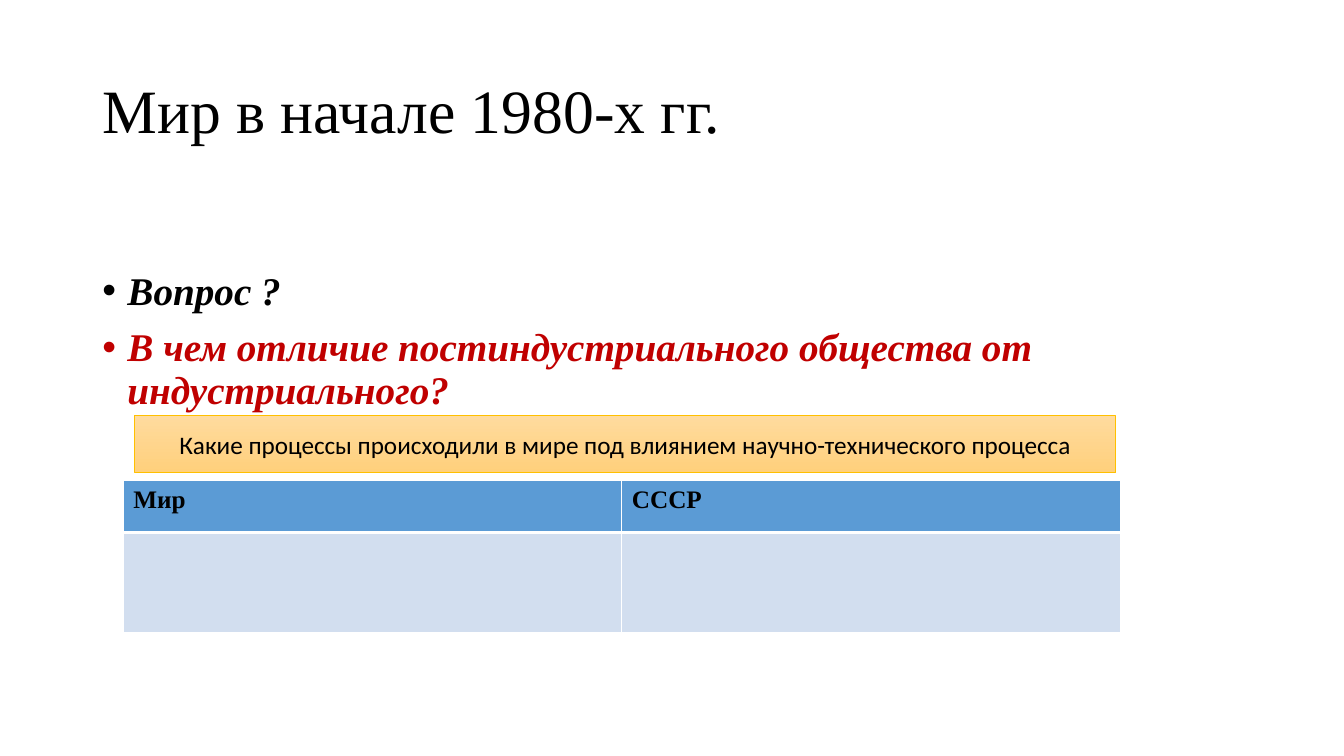
import pptx
import pptx.util
import pptx.dml.color
import pptx.enum.shapes
import pptx.enum.text
import pptx.oxml.ns
import lxml.etree

Pt = pptx.util.Pt
RGB = pptx.dml.color.RGBColor
ALIGN = pptx.enum.text.PP_ALIGN
ANCHOR = pptx.enum.text.MSO_ANCHOR
qn = pptx.oxml.ns.qn

BLACK = RGB(0x00, 0x00, 0x00)
WHITE = RGB(0xFF, 0xFF, 0xFF)
RED = RGB(0xC0, 0x00, 0x00)
BLUE = RGB(0x5B, 0x9B, 0xD5)
PALE_BLUE = RGB(0xD2, 0xDE, 0xEF)
GOLD = RGB(0xFF, 0xC0, 0x00)
LIGHT_ORANGE = RGB(0xFF, 0xDB, 0x9E)
ORANGE = RGB(0xFF, 0xD0, 0x7C)
SERIF = "Times New Roman"


def add_run(p, text, size, color, font=SERIF, bold=False, italic=False):
    r = p.add_run()
    r.text = text
    r.font.name = font
    r.font.size = Pt(size)
    r.font.color.rgb = color
    r.font.bold = bold
    r.font.italic = italic


def add_border(cell, side, width):
    tcPr = cell._tc.get_or_add_tcPr()
    ln = lxml.etree.SubElement(tcPr, qn("a:" + side), w=str(Pt(width)))
    fill = lxml.etree.SubElement(ln, qn("a:solidFill"))
    lxml.etree.SubElement(fill, qn("a:srgbClr"), val=str(WHITE))


prs = pptx.Presentation()
prs.slide_width, prs.slide_height = Pt(960), Pt(540)
s = prs.slides.add_slide(prs.slide_layouts[5])

# Title
title = s.shapes.title
title.left, title.top, title.width, title.height = Pt(66), Pt(28.8), Pt(828), Pt(104.4)
tf = title.text_frame
tf.vertical_anchor = ANCHOR.MIDDLE
p = tf.paragraphs[0]
p.alignment = ALIGN.LEFT
p.line_spacing = 0.9
add_run(p, "Мир в начале 1980-х гг.", 44, BLACK)

# Bulleted question
tf = s.shapes.add_textbox(Pt(66), Pt(144), Pt(828), Pt(342.7)).text_frame
tf.word_wrap = True
tf.margin_top = Pt(50)
questions = [
    ("Вопрос ?", BLACK),
    ("В чем отличие постиндустриального общества от индустриального?", RED),
]
for i, (text, color) in enumerate(questions):
    p = tf.add_paragraph() if i else tf.paragraphs[0]
    p.line_spacing = 0.9
    p.space_before = Pt(10 if i else 0)
    pPr = p._p.get_or_add_pPr()
    pPr.set("marL", str(Pt(18)))
    pPr.set("indent", str(-Pt(18)))
    lxml.etree.SubElement(pPr, qn("a:buFont"), typeface="Arial")
    lxml.etree.SubElement(pPr, qn("a:buChar"), char="•")
    add_run(p, text, 28, color, bold=True, italic=True)

# Comparison table
table = s.shapes.add_table(2, 2, Pt(88), Pt(343.5), Pt(712.4), Pt(108.4)).table
table.horz_banding = False
for column in table.columns:
    column.width = Pt(356.2)
table.rows[0].height = Pt(36.8)
table.rows[1].height = Pt(71.6)
rows = [
    (("Мир", "СССР"), BLUE, {"lnL": 1, "lnR": 1, "lnT": 1, "lnB": 3}),
    (("", ""), PALE_BLUE, {"lnL": 1, "lnR": 1, "lnT": 3, "lnB": 1}),
]
for i, (texts, color, borders) in enumerate(rows):
    for j, text in enumerate(texts):
        cell = table.cell(i, j)
        for side, width in borders.items():
            add_border(cell, side, width)
        cell.fill.solid()
        cell.fill.fore_color.rgb = color
        if text:
            add_run(cell.text_frame.paragraphs[0], text, 18, BLACK, bold=True)

# Banner above the table
sp = s.shapes.add_shape(pptx.enum.shapes.MSO_SHAPE.RECTANGLE,
                        Pt(96.3), Pt(296.8), Pt(700.6), Pt(40.8))
sp.shadow.inherit = False
sp.fill.gradient()
sp.fill.gradient_angle = 270
for stop, position, color in zip(sp.fill.gradient_stops, (0, 1), (LIGHT_ORANGE, ORANGE)):
    stop.position = position
    stop.color.rgb = color
sp.line.color.rgb = GOLD
sp.line.width = Pt(0.5)
tf = sp.text_frame
tf.word_wrap = True
tf.vertical_anchor = ANCHOR.MIDDLE
p = tf.paragraphs[0]
p.alignment = ALIGN.CENTER
add_run(p, "Какие процессы происходили в мире под влиянием научно-технического процесса",
        18, BLACK, font="Calibri")

prs.save("out.pptx")
